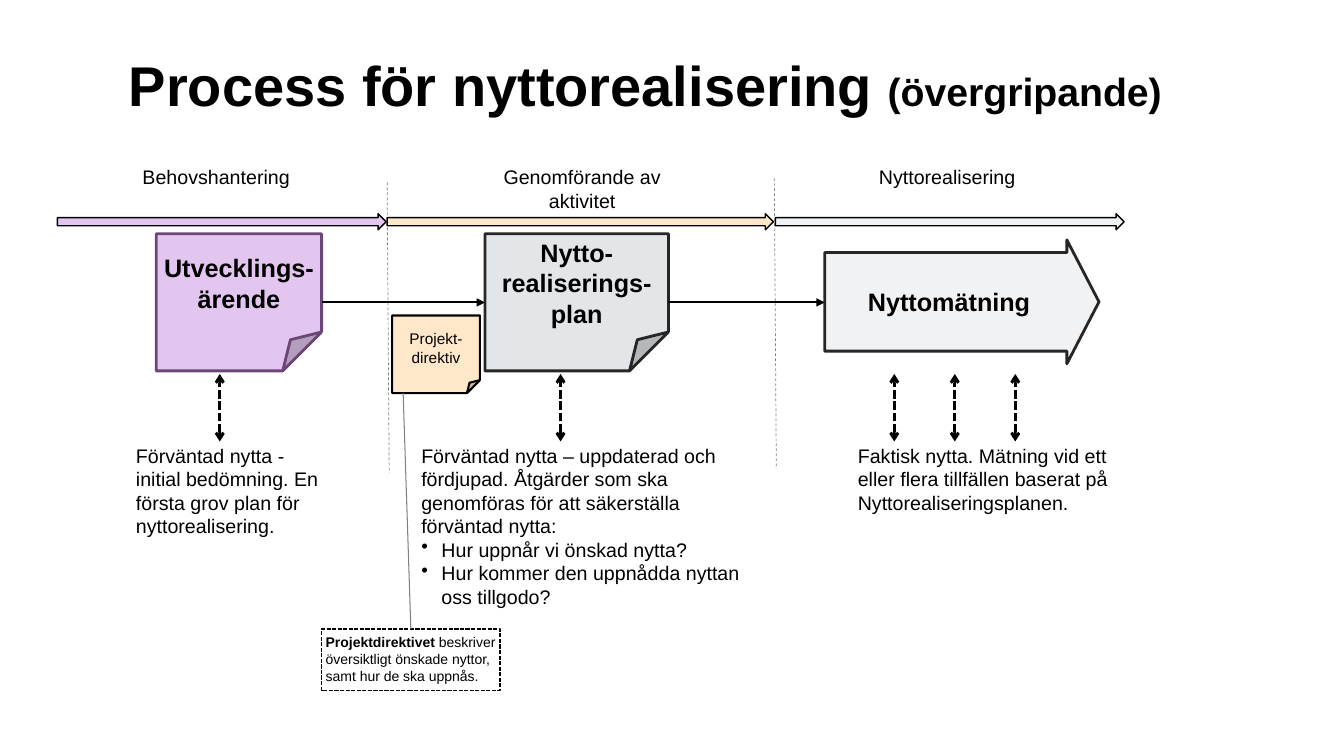
from collections import namedtuple

from pptx import Presentation
from pptx.dml.color import RGBColor
from pptx.enum.dml import MSO_LINE
from pptx.enum.shapes import MSO_CONNECTOR, MSO_SHAPE
from pptx.enum.text import MSO_ANCHOR, MSO_AUTO_SIZE, PP_ALIGN
from pptx.oxml.ns import qn
from pptx.util import Inches, Pt
from lxml import etree

LEFT, CENTER = PP_ALIGN.LEFT, PP_ALIGN.CENTER
TOP, MIDDLE = MSO_ANCHOR.TOP, MSO_ANCHOR.MIDDLE
DASH, SHORT_DASH = MSO_LINE.DASH, MSO_LINE.SQUARE_DOT
FOLDED, ARROW, RECT = MSO_SHAPE.FOLDED_CORNER, MSO_SHAPE.RIGHT_ARROW, MSO_SHAPE.RECTANGLE

BLACK, WHITE, GRAY, DARK = "000000", "FFFFFF", "808080", "262626"
LILAC, PLUM, PEACH, MIST, PALE = "E2C6F0", "6C4776", "FFE8C9", "E2E6E8", "F0F2F4"

# Rows shared by the three phases, in inches
LABEL_ROW, BAND_ROW, FLOW_ROW, LINK_ROW, NOTE_ROW = 1.59, 2.12, 3.0, 3.71, 4.35
BAND_HEIGHT, LINK_HEIGHT = 0.16, 0.67
DIVIDER_HEIGHT, DIVIDER_LEAN = 2.88, 0.02

# Shape guides in thousandths of a percent
FOLD = {"adj": 28400}
BROAD_ARROW = {"adj1": 79500, "adj2": 25900}

Box = namedtuple("Box", "left top width height")


def color(hex_code):
    return RGBColor.from_string(hex_code)


def write(shape, paragraphs, size, bold=False, align=LEFT, anchor=TOP, insets=(0.1, 0.05)):
    """Fill a shape with paragraphs, each a string or a list of (text, font settings)."""
    frame = shape.text_frame
    frame.word_wrap = True
    frame.vertical_anchor = anchor
    frame.margin_left = frame.margin_right = Inches(insets[0])
    frame.margin_top = frame.margin_bottom = Inches(insets[1])
    for index, content in enumerate(paragraphs):
        paragraph = frame.add_paragraph() if index else frame.paragraphs[0]
        paragraph.alignment = align
        font = paragraph.font
        font.name, font.size, font.bold = "Arial", Pt(size), bold
        font.color.rgb = color(BLACK)
        for text, settings in [(content, {})] if isinstance(content, str) else content:
            run = paragraph.add_run()
            run.text = text
            for key, value in settings.items():
                setattr(run.font, key, value)
    return frame


def add_text(slide, box, paragraphs, size, **style):
    return write(slide.shapes.add_textbox(*map(Inches, box)), paragraphs, size, **style)


def add_block(slide, kind, box, fill, outline, weight, guides=None):
    block = slide.shapes.add_shape(kind, *map(Inches, box))
    block.shadow.inherit = False
    block.fill.solid()
    block.fill.fore_color.rgb = color(fill)
    block.line.color.rgb = color(outline)
    block.line.width = Pt(weight)
    if guides:
        guide_list = block._element.spPr.find(qn("a:prstGeom")).get_or_add_avLst()
        for old_guide in list(guide_list):
            guide_list.remove(old_guide)
        for name, value in guides.items():
            etree.SubElement(guide_list, qn("a:gd"), name=name, fmla=f"val {value}")
    return block


def add_line(slide, start, end, stroke, weight, dash=None, head=None, tail=None):
    line = slide.shapes.add_connector(MSO_CONNECTOR.STRAIGHT, *map(Inches, start + end))
    line.line.color.rgb = color(stroke)
    line.line.width = Pt(weight)
    if dash:
        line.line.dash_style = dash
    outline = line._element.spPr.find(qn("a:ln"))
    for tag, arrowhead in (("a:headEnd", head), ("a:tailEnd", tail)):
        if arrowhead:
            etree.SubElement(outline, qn(tag), type=arrowhead)
    etree.SubElement(line._element.spPr, qn("a:effectLst"))


def add_bullet(paragraph):
    properties = paragraph._p.get_or_add_pPr()
    properties.set("marL", str(Inches(0.2)))
    properties.set("indent", str(Inches(-0.2)))
    properties.insert(0, etree.Element(qn("a:buChar"), char="•"))


def add_title(slide, box):
    parts = [("Process för nyttorealisering ", {}), ("(övergripande)", {"size": Pt(28)})]
    add_text(slide, box, [parts], 40, bold=True, anchor=MIDDLE)


def add_phase(slide, left, width, fill, name, label_offset, label_width):
    """Draw the band of one phase with its name above."""
    band = Box(left, BAND_ROW, width, BAND_HEIGHT)
    add_block(slide, ARROW, band, fill, BLACK, 1)
    label = Box(left + label_offset, LABEL_ROW, label_width, BAND_ROW - LABEL_ROW)
    add_text(slide, label, [name], 14, align=CENTER)


def add_divider(slide, left, top):
    add_line(slide, (left, top), (left + DIVIDER_LEAN, top + DIVIDER_HEIGHT), GRAY, 0.5, DASH)


def add_stage(slide, kind, box, text, fill, outline, guides, inset):
    block = add_block(slide, kind, box, fill, outline, 2, guides)
    write(block, [text], 18, bold=True, align=CENTER, anchor=MIDDLE, insets=(inset, 0.04))


def add_note(slide, left, width, height, paragraphs, link_offsets):
    """Write the note under a stage, tied to it by double arrows."""
    frame = add_text(slide, Box(left, NOTE_ROW, width, height), paragraphs, 14)
    for paragraph in frame.paragraphs[1:]:
        add_bullet(paragraph)
    for offset in link_offsets:
        x = left + offset
        add_line(slide, (x, LINK_ROW + LINK_HEIGHT), (x, LINK_ROW), BLACK, 2,
                 SHORT_DASH, head="arrow", tail="arrow")


def add_directive(slide, card, caption):
    """Draw the project directive card, its caption and the line between them."""
    directive = add_block(slide, FOLDED, card, PEACH, BLACK, 1.5)
    write(directive, ["Projekt-direktiv"], 11, align=CENTER, anchor=MIDDLE, insets=(0.04, 0.04))
    explanation = add_block(slide, RECT, caption, WHITE, BLACK, 1)
    explanation.line.dash_style = SHORT_DASH
    parts = [("Projektdirektivet", {"bold": True}),
             (" beskriver översiktligt önskade nyttor, samt hur de ska uppnås.", {})]
    frame = write(explanation, [parts], 10, insets=(0.04, 0.05))
    frame.auto_size = MSO_AUTO_SIZE.SHAPE_TO_FIT_TEXT
    add_line(slide, (caption.left + caption.width / 2, caption.top),
             (card.left + card.width / 8, card.top + card.height), GRAY, 0.75)


def main():
    deck = Presentation()
    deck.slide_width, deck.slide_height = Inches(13.33), Inches(7.5)
    slide = deck.slides.add_slide(deck.slide_layouts[6])
    add_title(slide, Box(1.18, 0.39, 11.27, 0.88))

    add_note(slide, 1.25, 2.05, 1.04,
             ["Förväntad nytta - initial bedömning. En första grov plan för nyttorealisering."],
             [0.93])
    add_note(slide, 4.08, 3.61, 1.75,
             ["Förväntad nytta – uppdaterad och fördjupad. Åtgärder som ska genomföras "
              "för att säkerställa förväntad nytta:",
              "Hur uppnår vi önskad nytta?",
              "Hur kommer den uppnådda nyttan oss tillgodo?"],
             [1.48])
    add_note(slide, 8.41, 2.93, 0.81,
             ["Faktisk nytta. Mätning vid ett eller flera tillfällen baserat på "
              "Nyttorealiseringsplanen."],
             [0.46 + 0.6 * step for step in range(3)])

    case = Box(1.55, FLOW_ROW - 0.68, 1.64, 1.36)
    plan = Box(4.81, FLOW_ROW - 0.68, 1.82, 1.36)
    measurement = Box(8.18, FLOW_ROW - 0.62, 2.72, 1.23)
    add_stage(slide, FOLDED, case, "Utvecklings-ärende", LILAC, PLUM, FOLD, 0.04)
    add_stage(slide, FOLDED, plan, "Nytto-realiserings-plan", MIST, DARK, FOLD, 0.04)
    add_stage(slide, ARROW, measurement, "Nyttomätning", PALE, DARK, BROAD_ARROW, 0.1)
    for source, target in ((case, plan), (plan, measurement)):
        add_line(slide, (source.left + source.width, FLOW_ROW), (target.left, FLOW_ROW),
                 BLACK, 1.5, tail="triangle")

    add_divider(slide, 7.68, 1.77)
    add_divider(slide, 3.84, 1.81)
    add_phase(slide, 3.84, 3.83, PEACH, "Genomförande av aktivitet", 0.92, 2.03)
    add_phase(slide, 7.69, 3.46, PALE, "Nyttorealisering", 0.64, 2.13)
    add_phase(slide, 0.57, 3.26, LILAC, "Behovshantering", 0.74, 1.67)
    add_directive(slide, Box(3.89, 3.13, 0.87, 0.77), Box(3.19, 6.24, 1.77, 0.61))
    deck.save("out.pptx")


if __name__ == "__main__":
    main()
